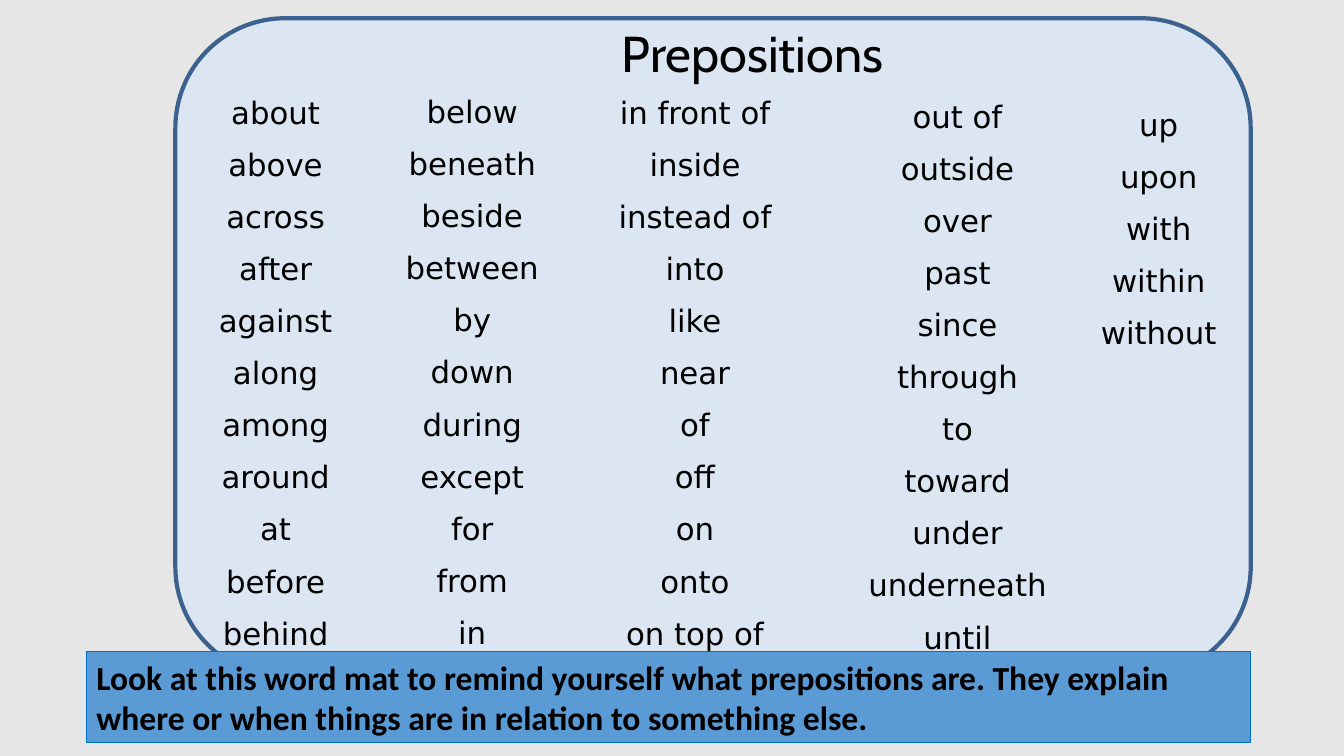
from pptx import Presentation
from pptx.dml.color import RGBColor
from pptx.enum.shapes import MSO_SHAPE as Preset
from pptx.enum.text import MSO_ANCHOR as Anchor, PP_ALIGN as Align
from pptx.util import Cm, Pt

COLUMNS = [
    (5.08, 2.26, 3.73, "about,above,across,after,against,along,among,around,at,before,behind"),
    (9.93, 2.24, 3.94, "below,beneath,beside,between,by,down,during,except,for,from,in"),
    (15.32, 2.26, 4.39, "in front of,inside,instead of,into,like,near,of,off,on,onto,on top of"),
    (21.41, 2.36, 5.44, "out of,outside,over,past,since,through,to,toward,under,underneath,until"),
    (26.85, 2.57, 4.7, "up,upon,with,within,without"),
]
REMINDER = (
    "Look at this word mat to remind yourself what prepositions are. "
    "They explain where or when things are in relation to something else."
)


def color(code):
    return RGBColor.from_string(code)


class WordMat:
    """Draws the panels and text of a word mat on one slide."""

    ink = "000000"
    inset = Cm(0.1)

    def __init__(self, page):
        self.page = page

    def background(self, fill):
        backdrop = self.page.background.fill
        backdrop.solid()
        backdrop.fore_color.rgb = color(fill)

    def panel(self, preset, place, fill, line, width):
        shape = self.page.shapes.add_shape(preset, *map(Cm, place))
        shape.shadow.inherit = False
        shape.fill.solid()
        shape.fill.fore_color.rgb = color(fill)
        shape.line.color.rgb = color(line)
        shape.line.width = Pt(width)
        return shape

    def fill_text(self, frame, lines, font, size, align=Align.CENTER, bold=False, gap=0):
        frame.word_wrap = True
        frame.text = "\n".join(lines)
        for para in frame.paragraphs:
            para.alignment = align
            para.space_after = Pt(gap)
            para.font.name = font
            para.font.size = Pt(size)
            para.font.bold = bold
            para.font.color.rgb = color(self.ink)

    def text(self, place, lines, font, size, gap=0):
        frame = self.page.shapes.add_textbox(*map(Cm, place)).text_frame
        frame.margin_left = frame.margin_right = self.inset
        frame.margin_top = frame.margin_bottom = self.inset
        self.fill_text(frame, lines, font, size, gap=gap)

    def banner(self, place, message):
        shape = self.panel(Preset.RECTANGLE, place, "5B9BD5", "0070C0", 0.75)
        shape.text_frame.vertical_anchor = Anchor.MIDDLE
        self.fill_text(shape.text_frame, [message], "Calibri", 24, Align.LEFT, bold=True)


def main():
    deck = Presentation()
    deck.slide_width, deck.slide_height = Cm(33.87), Cm(19.05)
    mat = WordMat(deck.slides.add_slide(deck.slide_layouts[6]))
    mat.background("E7E6E6")
    mat.panel(Preset.ROUNDED_RECTANGLE, (4.42, 0.46, 27.1, 16.59), "DCE6F2", "3B618E", 3)
    mat.text((8.74, 0.46, 20.45, 1.35), ["Prepositions"], "Cabin", 36)
    for left, top, width, words in COLUMNS:
        mat.text((left, top, width, 14.9), words.split(","), "DejaVu Sans", 22, gap=10.8)
    mat.banner((2.18, 16.41, 29.34, 2.31), REMINDER)
    deck.save("out.pptx")


if __name__ == "__main__":
    main()
